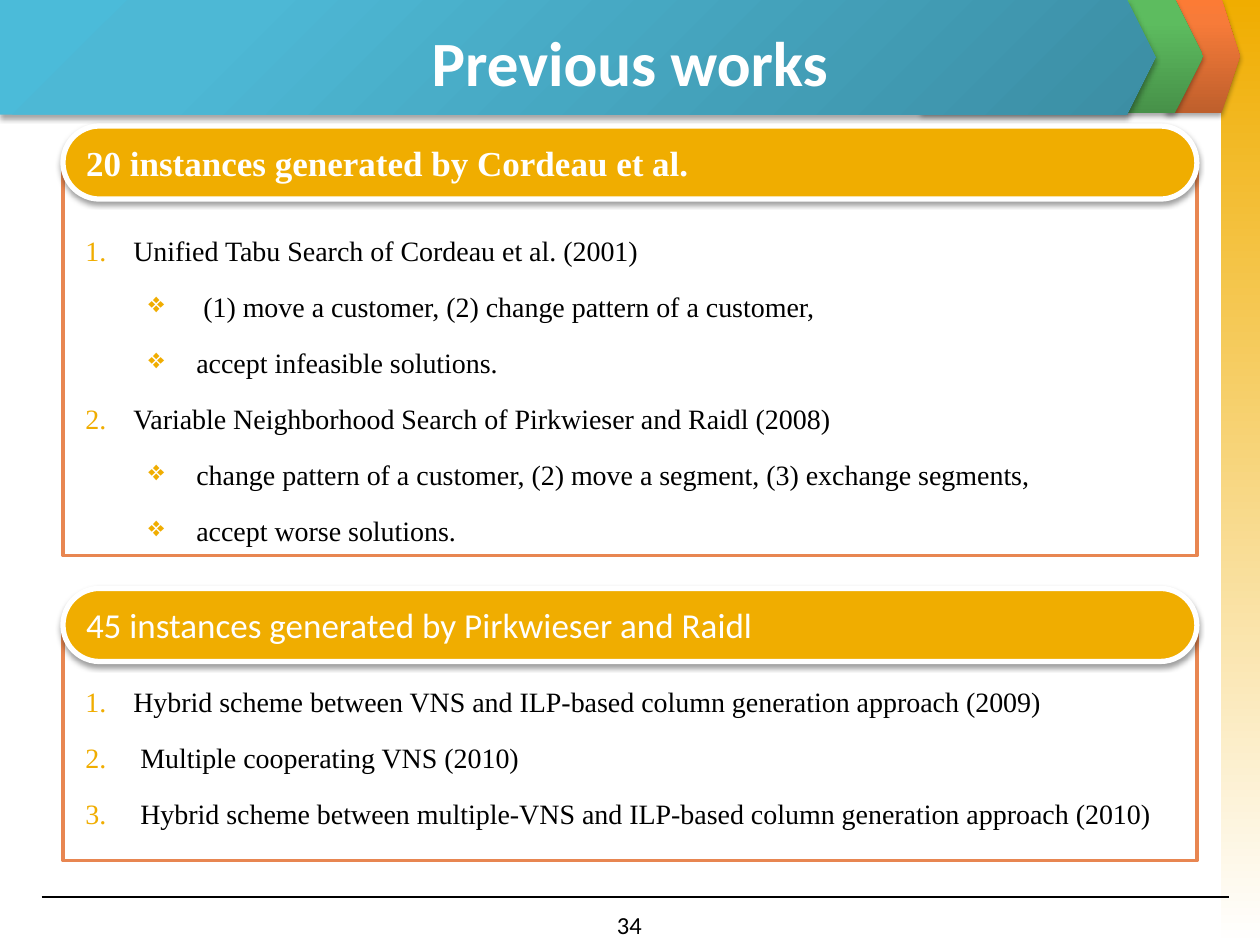
from pptx import Presentation
from pptx.dml.color import RGBColor
from pptx.enum.shapes import MSO_CONNECTOR, MSO_SHAPE
from pptx.enum.text import MSO_ANCHOR, PP_ALIGN
from pptx.oxml import parse_xml
from pptx.oxml.ns import nsdecls, qn
from pptx.util import Inches, Pt

GOLD, ORANGE, WHITE, BLACK = "F0AD00", "E88651", "FFFFFF", "000000"
SERIF, SANS = "Times New Roman", "Calibri"
LEFT, WIDTH = 0.5, 9


def color(value):
    return RGBColor.from_string(value)


def element(tag, attributes="", inner=""):
    return parse_xml(f"<a:{tag} {nsdecls('a')} {attributes}>{inner}</a:{tag}>")


class SlideBuilder:
    def __init__(self, slide):
        self.slide = slide

    def add_run(self, paragraph, text, size, font, ink, bold=False):
        run = paragraph.add_run()
        run.text = text
        run.font.size = Pt(size)
        run.font.name = font
        run.font.bold = bold
        run.font.color.rgb = color(ink)

    def shape(self, kind, box, fill=None, line=None, line_width=0, adjust=None, shadow=None):
        shape = self.slide.shapes.add_shape(kind, *map(Inches, box))
        if adjust is not None:
            shape.adjustments[0] = adjust
        if fill:
            shape.fill.solid()
            shape.fill.fore_color.rgb = color(fill)
        if line:
            shape.line.color.rgb = color(line)
            shape.line.width = Pt(line_width)
        else:
            shape.line.fill.background()
        shape.shadow.inherit = False
        if shadow:
            opacity, blur, distance = shadow
            effects = shape._element.spPr.find(qn("a:effectLst"))
            effects.append(element(
                "outerShdw",
                f'blurRad="{Pt(blur)}" dist="{Pt(distance)}" dir="5400000" algn="t" rotWithShape="0"',
                f'<a:srgbClr val="{BLACK}"><a:alpha val="{opacity * 1000}"/></a:srgbClr>'))
        return shape

    def gradient_shape(self, kind, box, stops, angle=None, **style):
        shape = self.shape(kind, box, **style)
        shape.fill.background()
        stop_list = "".join(
            f'<a:gs pos="{position * 1000}"><a:srgbClr val="{ink}"/></a:gs>'
            for position, ink in stops)
        if angle is None:
            course = '<a:path path="circle"><a:fillToRect l="100000" t="100000"/></a:path>'
        else:
            course = f'<a:lin ang="{angle * 60000}" scaled="0"/>'
        properties = shape._element.spPr
        properties.replace(
            properties.find(qn("a:noFill")),
            element("gradFill", 'rotWithShape="1"', f"<a:gsLst>{stop_list}</a:gsLst>{course}"))

    def arrow_band(self, box, stops, angle=None):
        self.gradient_shape(MSO_SHAPE.PENTAGON, box, stops, angle,
                            adjust=0.25, shadow=(35, 3.1, 1.8))

    def rule(self, x1, x2, y):
        rule = self.slide.shapes.add_connector(
            MSO_CONNECTOR.STRAIGHT, Inches(x1), Inches(y), Inches(x2), Inches(y))
        rule.line.color.rgb = color(BLACK)
        rule.line.width = Pt(0.75)
        rule._element.spPr.append(element("effectLst"))

    def title(self, text, box):
        title = self.slide.shapes.title
        title.left, title.top, title.width, title.height = map(Inches, box)
        self.slide.shapes._spTree.append(title._element)
        title.text_frame.vertical_anchor = MSO_ANCHOR.MIDDLE
        paragraph = title.text_frame.paragraphs[0]
        paragraph.alignment = PP_ALIGN.CENTER
        self.add_run(paragraph, text, 36, SANS, WHITE, bold=True)

    def text_box(self, box):
        frame = self.slide.shapes.add_textbox(*map(Inches, box)).text_frame
        frame.word_wrap = True
        return frame

    def outline(self, items, box):
        frame = self.text_box(box)
        for index, (level, text) in enumerate(items):
            paragraph = frame.add_paragraph() if index else frame.paragraphs[0]
            paragraph.level = level
            paragraph.line_spacing = 1.5
            properties = paragraph._p.get_or_add_pPr()
            properties.set("marL", str(Inches(0.38 + 0.5 * level)))
            properties.set("indent", str(Inches(-0.38)))
            properties.append(element("spcBef", inner='<a:spcPct val="20000"/>'))
            properties.append(element("buClr", inner=f'<a:srgbClr val="{GOLD}"/>'))
            properties.append(element("buChar", 'char="❖"') if level
                              else element("buAutoNum", 'type="arabicPeriod"'))
            self.add_run(paragraph, text, 16, SERIF, BLACK)

    def section(self, heading, top, frame_height, items, items_top, items_height, font, bold):
        self.shape(MSO_SHAPE.RECTANGLE, (LEFT, top + 0.33, WIDTH, frame_height),
                   fill=WHITE, line=ORANGE, line_width=2)
        banner = self.shape(MSO_SHAPE.ROUNDED_RECTANGLE, (LEFT, top, WIDTH, 0.58), fill=GOLD,
                            line=WHITE, line_width=3, adjust=0.5, shadow=(38, 3.1, 1.6))
        banner.text_frame.vertical_anchor = MSO_ANCHOR.MIDDLE
        paragraph = banner.text_frame.paragraphs[0]
        paragraph.alignment = PP_ALIGN.LEFT
        self.add_run(paragraph, heading, 20, font, WHITE, bold)
        self.outline(items, (0.58, items_top, 9.42, items_height))

    def page_number(self, number, box):
        paragraph = self.text_box(box).paragraphs[0]
        paragraph.alignment = PP_ALIGN.CENTER
        self.add_run(paragraph, number, 14, SANS, BLACK)


def main():
    deck = Presentation()
    deck.slide_width, deck.slide_height = Inches(10), Inches(7.5)
    builder = SlideBuilder(deck.slides.add_slide(deck.slide_layouts[5]))

    builder.gradient_shape(MSO_SHAPE.RECTANGLE, (9.69, 0, 0.31, 7.5),
                           [(0, GOLD), (100, WHITE)], 90)
    builder.arrow_band((9.25, -0.01, 0.59, 0.91),
                       [(0, "BE5F2C"), (80, "F77B39"), (100, "FC7B35")], 270)
    builder.arrow_band((7.31, -0.01, 2.24, 0.91),
                       [(0, "479149"), (80, "5DBC5F"), (100, "5BBF5E")], 270)
    builder.rule(0.33, 9.75, 7.12)
    builder.arrow_band((0, 0, 9.17, 0.91),
                       [(0, "3C8EA4"), (80, "4DB8D5"), (100, "4BBBD9")])
    builder.title("Previous works", (LEFT, 0.14, WIDTH, 0.69))

    builder.section("20 instances generated by Cordeau et al.", 1, 3.08, [
        (0, "Unified Tabu Search of Cordeau et al. (2001)"),
        (1, " (1) move a customer, (2) change pattern of a customer,"),
        (1, "accept infeasible solutions."),
        (0, "Variable Neighborhood Search of Pirkwieser and Raidl (2008)"),
        (1, "change pattern of a customer, (2) move a segment, (3) exchange segments,"),
        (1, "accept worse solutions."),
    ], 1.67, 2.67, SERIF, True)
    builder.section("45 instances generated by Pirkwieser and Raidl", 4.67, 1.83, [
        (0, "Hybrid scheme between VNS and ILP-based column generation approach (2009)"),
        (0, " Multiple cooperating VNS (2010)"),
        (0, " Hybrid scheme between multiple-VNS and ILP-based column generation approach (2010)"),
    ], 5.25, 1.75, SANS, False)
    builder.page_number("34", (3.83, 7.17, 2.33, 0.25))

    deck.save("out.pptx")


if __name__ == "__main__":
    main()
